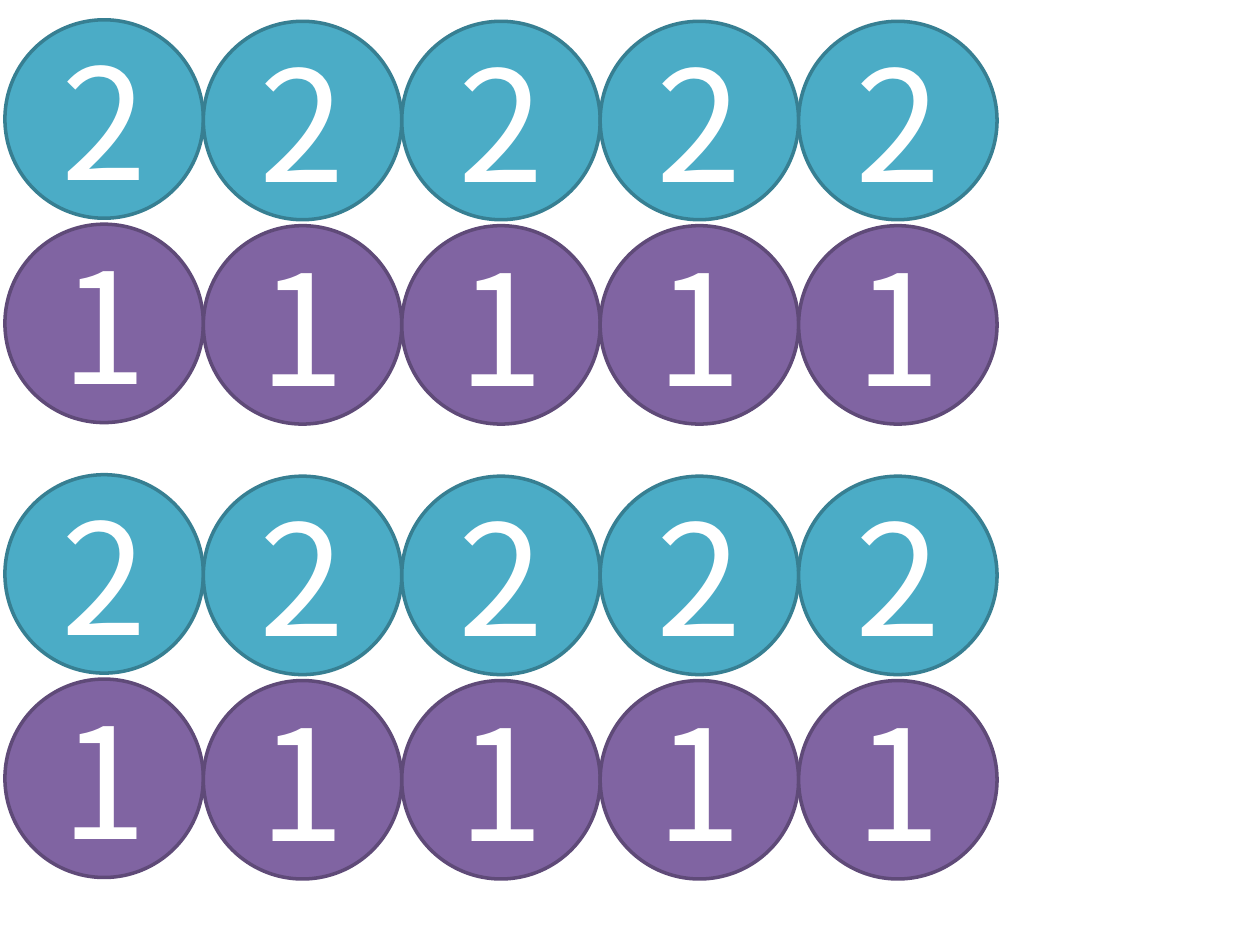
import pptx
import pptx.dml.color
import pptx.enum.shapes
import pptx.enum.text
import pptx.util
from pptx.util import Cm

FONT = "Noto Sans CJK KR"
DIAMETER = 4.0
COLUMNS = 5
ROW_PITCH = 4.12
BLOCK_PITCH = 9.17
FIRST_COLUMN_RISE = 0.03
# Digit, fill and outline of each row in a block
ROWS = [("2", "4BACC6", "377F92"), ("1", "8064A2", "5F4A78")]


def color(hex_string):
    return pptx.dml.color.RGBColor.from_string(hex_string)


def add_counter(slide, left, top, digit, fill, outline):
    """Place one round counter with its digit."""
    shape = slide.shapes.add_shape(
        pptx.enum.shapes.MSO_SHAPE.OVAL,
        Cm(left), Cm(top), Cm(DIAMETER), Cm(DIAMETER))
    shape.shadow.inherit = False
    shape.fill.solid()
    shape.fill.fore_color.rgb = color(fill)
    shape.line.color.rgb = color(outline)
    shape.line.width = pptx.util.Pt(2)

    # Centred digit
    shape.text_frame.vertical_anchor = pptx.enum.text.MSO_ANCHOR.MIDDLE
    paragraph = shape.text_frame.paragraphs[0]
    paragraph.text = digit
    paragraph.alignment = pptx.enum.text.PP_ALIGN.CENTER
    paragraph.font.name = FONT
    paragraph.font.size = pptx.util.Pt(88)
    paragraph.font.color.rgb = color("FFFFFF")


def add_counter_block(slide, left, top):
    """Place a row of twos above a row of ones, column by column."""
    for column in range(COLUMNS):
        rise = FIRST_COLUMN_RISE if column == 0 else 0
        for row, (digit, fill, outline) in enumerate(ROWS):
            add_counter(slide, left + column * DIAMETER,
                        top + row * ROW_PITCH - rise, digit, fill, outline)


def main():
    presentation = pptx.Presentation()
    presentation.slide_width = Cm(25.4)
    presentation.slide_height = Cm(19.05)
    slide = presentation.slides.add_slide(presentation.slide_layouts[6])

    # Two equal blocks, one below the other
    for block in range(2):
        add_counter_block(slide, left=0.1, top=0.43 + block * BLOCK_PITCH)

    presentation.save("out.pptx")


if __name__ == "__main__":
    main()
